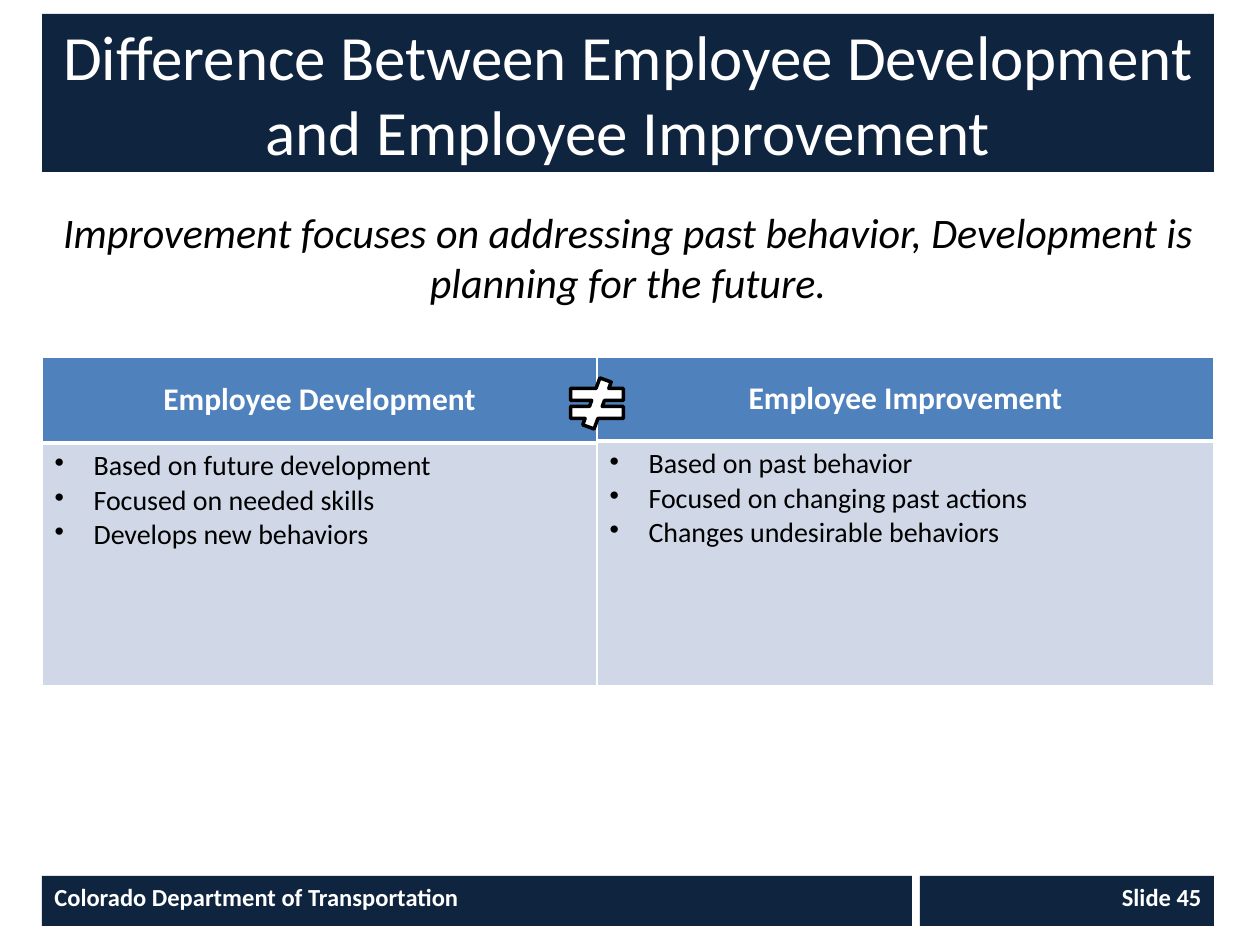
import pptx
import pptx.dml.color
import pptx.enum.shapes
import pptx.enum.text
import pptx.oxml
import pptx.oxml.ns
import pptx.util

PX = 914400 // 126
FONT = "Calibri"
NAVY, BLUE, PALE = "0F243E", "4F81BD", "D0D8E8"
WHITE, BLACK = "FFFFFF", "000000"
ALIGN = pptx.enum.text.PP_ALIGN
ANCHOR = pptx.enum.text.MSO_ANCHOR
SHAPE = pptx.enum.shapes.MSO_SHAPE


def px(*lengths):
    return [pptx.util.Emu(length * PX) for length in lengths]


def color(hex_code):
    return pptx.dml.color.RGBColor.from_string(hex_code)


def paint(target, hex_code):
    target.fill.solid()
    target.fill.fore_color.rgb = color(hex_code)


def write(paragraph, text, size, hex_code, align=ALIGN.LEFT, bold=False, italic=False):
    paragraph.alignment = align
    run = paragraph.add_run()
    run.text = text
    font = run.font
    font.name, font.size = FONT, pptx.util.Pt(size)
    font.bold, font.italic = bold, italic
    font.color.rgb = color(hex_code)


def set_bullet(paragraph, char=None, indent=0):
    """Give the paragraph a hanging bullet, or none when char is None."""
    props = paragraph._p.get_or_add_pPr()
    props.set("marL", str(indent * PX))
    props.set("indent", str(-indent * PX))
    tag = f'buChar char="{char}"' if char else "buNone"
    props.append(pptx.oxml.parse_xml(f"<a:{tag} {pptx.oxml.ns.nsdecls('a')}/>"))


def set_borders(cell, **widths):
    """Draw white borders; widths are points keyed by L, R, T and B."""
    props = cell._tc.get_or_add_tcPr()
    for place, side in enumerate("LRTB"):
        width = pptx.util.Pt(widths.get(side, 1))
        props.insert(place, pptx.oxml.parse_xml(
            f'<a:ln{side} {pptx.oxml.ns.nsdecls("a")} w="{width}">'
            f'<a:solidFill><a:srgbClr val="{WHITE}"/></a:solidFill></a:ln{side}>'))


def place(shape, box):
    shape.left, shape.top, shape.width, shape.height = px(*box)


def add_title(slide, box, text):
    title = slide.shapes.title
    place(title, box)
    paint(title, NAVY)
    frame = title.text_frame
    frame.auto_size = pptx.enum.text.MSO_AUTO_SIZE.NONE
    frame.vertical_anchor = ANCHOR.MIDDLE
    write(frame.paragraphs[0], text, 36, WHITE, ALIGN.CENTER)


def add_summary(slide, box, text):
    summary = slide.placeholders[1]
    place(summary, box)
    frame = summary.text_frame
    frame.auto_size = pptx.enum.text.MSO_AUTO_SIZE.NONE
    write(frame.paragraphs[0], text, 24, BLACK, ALIGN.CENTER, italic=True)
    set_bullet(frame.paragraphs[0])


def add_column(slide, box, header_height, heading, points):
    """Add a one-column table: a heading over a bulleted list."""
    left, top, width, height = box
    table = slide.shapes.add_table(2, 1, *px(*box)).table
    table.horz_banding = False
    table.columns[0].width, = px(width)
    table.rows[0].height, table.rows[1].height = px(header_height, height - header_height)

    header, body = table.cell(0, 0), table.cell(1, 0)
    paint(header, BLUE)
    set_borders(header, B=3)
    header.vertical_anchor = ANCHOR.MIDDLE
    write(header.text_frame.paragraphs[0], heading, 18, WHITE, ALIGN.CENTER, bold=True)

    paint(body, PALE)
    set_borders(body, T=3)
    frame = body.text_frame
    for index, point in enumerate(points):
        paragraph = frame.add_paragraph() if index else frame.paragraphs[0]
        write(paragraph, point, 16, BLACK)
        set_bullet(paragraph, "•", 39)


def add_not_equal(slide, box):
    sign = slide.shapes.add_shape(SHAPE.MATH_NOT_EQUAL, *px(*box))
    sign.shadow.inherit = False
    paint(sign, WHITE)
    sign.line.color.rgb = color(BLACK)
    sign.line.width = pptx.util.Pt(2)


def add_footer(slide, box, department, number):
    left, top, width, height = box
    number_width, gap = 294, 8
    department_width = width - number_width - gap
    parts = (
        (left, department_width, department, ALIGN.LEFT),
        (left + department_width + gap, number_width, number, ALIGN.RIGHT),
    )
    for part_left, part_width, text, align in parts:
        bar = slide.shapes.add_shape(
            SHAPE.RECTANGLE, *px(part_left, top, part_width, height))
        bar.shadow.inherit = False
        paint(bar, NAVY)
        bar.line.fill.background()
        frame = bar.text_frame
        frame.word_wrap = True
        frame.vertical_anchor = ANCHOR.TOP
        write(frame.paragraphs[0], text, 14, WHITE, align, bold=True)


def main():
    deck = pptx.Presentation()
    deck.slide_width, deck.slide_height = px(1260, 945)
    slide = deck.slides.add_slide(deck.slide_layouts[1])
    left, width = 42, 1172
    table_top, table_height, split = 357, 329, 555

    add_title(slide, (left, 14, width, 158),
              "Difference Between Employee Development and Employee Improvement")
    add_summary(slide, (left, 200, width, 105),
                "Improvement focuses on addressing past behavior, "
                "Development is planning for the future.")
    add_column(slide, (left + split, table_top, width - split, table_height), 84,
               "Employee Improvement",
               ("Based on past behavior", "Focused on changing past actions",
                "Changes undesirable behaviors"))
    add_column(slide, (left, table_top, split, table_height), 86,
               "Employee Development",
               ("Based on future development", "Focused on needed skills",
                "Develops new behaviors"))
    add_not_equal(slide, (561, 378, 72, 51))
    add_footer(slide, (left, 876, width, 50),
               "Colorado Department of Transportation", "Slide 45")
    deck.save("out.pptx")


if __name__ == "__main__":
    main()
